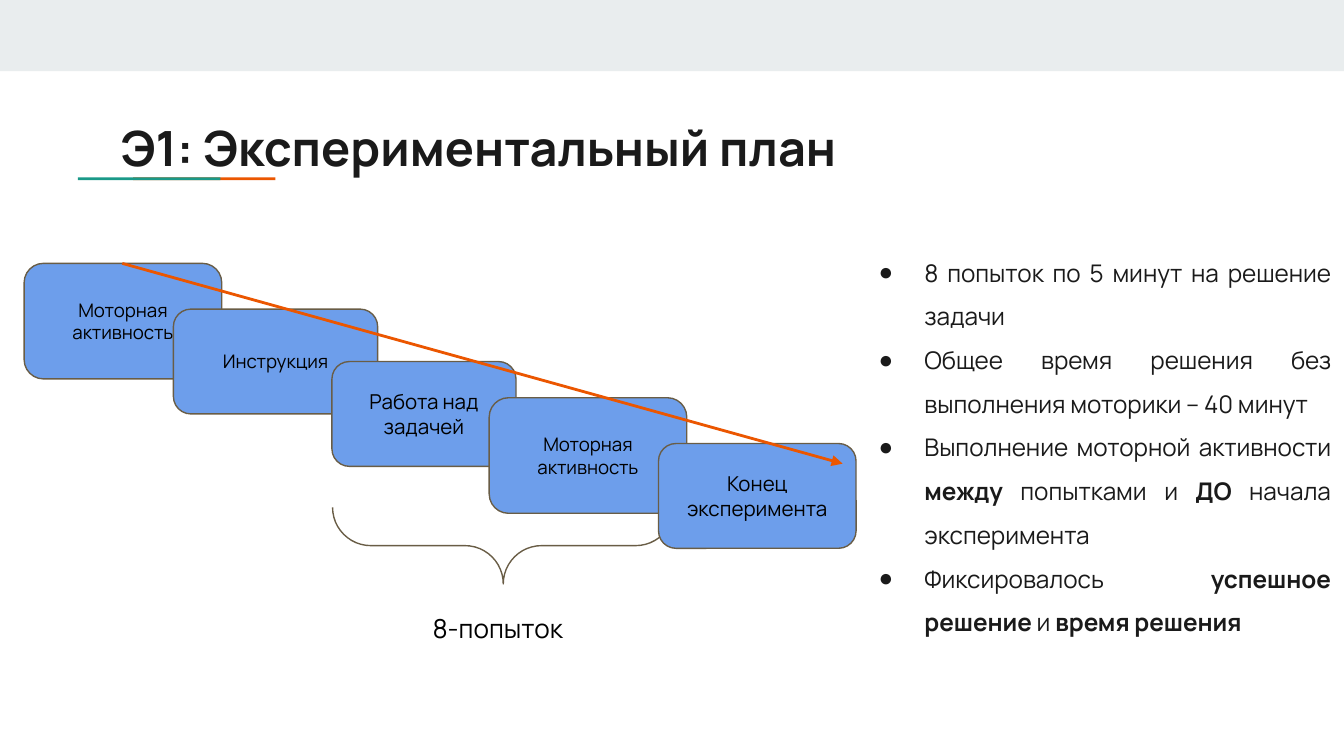
from lxml import etree
from pptx import Presentation
from pptx.dml.color import RGBColor
from pptx.enum.shapes import MSO_CONNECTOR, MSO_SHAPE
from pptx.enum.text import MSO_ANCHOR, PP_ALIGN
from pptx.oxml.ns import qn
from pptx.util import Inches, Pt

FONT = "Manrope"
BAND = RGBColor(0xE9, 0xED, 0xEE)
ORANGE = RGBColor(0xEB, 0x56, 0x00)
TEAL = RGBColor(0x1A, 0x99, 0x88)
BLUE = RGBColor(0x6D, 0x9E, 0xEB)
BROWN = RGBColor(0x69, 0x5D, 0x46)
INK = RGBColor(0x1A, 0x1A, 0x1A)
BLACK = RGBColor(0, 0, 0)

STAGES = [
    ("Моторная активность", 10, (0.18, 1.96, 1.47, 0.86)),
    ("Инструкция", 10, (1.29, 2.3, 1.52, 0.78)),
    ("Работа над задачей", 11, (2.47, 2.69, 1.37, 0.78)),
    ("Моторная активность", 10, (3.64, 2.96, 1.47, 0.86)),
    ("Конец эксперимента", 11, (4.9, 3.3, 1.47, 0.78)),
]

NOTES = [
    [("8 попыток по 5 минут на решение задачи", False)],
    [("Общее время решения без выполнения моторики – 40 минут", False)],
    [("Выполнение моторной активности ", False), ("между ", True),
     ("попытками и ", False), ("ДО ", True), ("начала эксперимента ", False)],
    [("Фиксировалось ", False), ("успешное решение", True),
     (" и ", False), ("время решения", True)],
]


def set_font(paragraph, size, color, bold=None):
    font = paragraph.font
    font.name, font.size, font.bold = FONT, Pt(size), bold
    font.color.rgb = color


def set_margins(frame, side=0.1, vertical=0.1):
    frame.word_wrap = True
    frame.margin_left = frame.margin_right = Inches(side)
    frame.margin_top = frame.margin_bottom = Inches(vertical)


def add_bar(slide, box, color):
    bar = slide.shapes.add_shape(MSO_SHAPE.RECTANGLE, *map(Inches, box))
    bar.shadow.inherit = False
    bar.fill.solid()
    bar.fill.fore_color.rgb = color
    bar.line.fill.background()


def add_label(slide, text, box, size, color, bold=None, vertical=0.1):
    frame = slide.shapes.add_textbox(*map(Inches, box)).text_frame
    set_margins(frame, vertical=vertical)
    frame.text = text
    set_font(frame.paragraphs[0], size, color, bold)


def add_stage(slide, text, size, box):
    stage = slide.shapes.add_shape(
        MSO_SHAPE.FLOWCHART_ALTERNATE_PROCESS, *map(Inches, box))
    stage.shadow.inherit = False
    stage.fill.solid()
    stage.fill.fore_color.rgb = BLUE
    stage.line.color.rgb = BROWN
    stage.line.width = Pt(0.75)
    frame = stage.text_frame
    set_margins(frame)
    frame.vertical_anchor = MSO_ANCHOR.MIDDLE
    frame.text = text
    frame.paragraphs[0].alignment = PP_ALIGN.CENTER
    set_font(frame.paragraphs[0], size, BLACK)


def add_brace(slide, box):
    brace = slide.shapes.add_shape(MSO_SHAPE.LEFT_BRACE, *map(Inches, box))
    brace.shadow.inherit = False
    brace.rotation = 270
    brace.adjustments[0] = brace.adjustments[1] = 0.5
    brace.fill.background()
    brace.line.color.rgb = BROWN
    brace.line.width = Pt(0.75)


def add_arrow(slide, start, end):
    arrow = slide.shapes.add_connector(
        MSO_CONNECTOR.STRAIGHT, *map(Inches, start + end))
    arrow.line.color.rgb = ORANGE
    arrow.line.width = Pt(1.5)
    outline = arrow._element.spPr.find(qn("a:ln"))
    etree.SubElement(outline, qn("a:tailEnd"), type="triangle")
    etree.SubElement(arrow._element.spPr, qn("a:effectLst"))


def add_bullet(paragraph):
    properties = paragraph._p.get_or_add_pPr()
    properties.set("marL", str(Inches(0.5)))
    properties.set("indent", str(Inches(-0.34)))
    bullet_color = etree.SubElement(properties, qn("a:buClr"))
    etree.SubElement(bullet_color, qn("a:srgbClr"), val=str(INK))
    etree.SubElement(properties, qn("a:buFont"), typeface="Arial")
    etree.SubElement(properties, qn("a:buChar"), char="●")


def add_notes(slide, notes, box):
    frame = slide.shapes.add_textbox(*map(Inches, box)).text_frame
    set_margins(frame)
    for index, parts in enumerate(notes):
        paragraph = frame.add_paragraph() if index else frame.paragraphs[0]
        paragraph.alignment = PP_ALIGN.JUSTIFY
        paragraph.line_spacing = 1.5
        add_bullet(paragraph)
        set_font(paragraph, 13, INK)
        for text, bold in parts:
            run = paragraph.add_run()
            run.text = text
            run.font.bold = bold


def main():
    deck = Presentation()
    deck.slide_width = Inches(10)
    deck.slide_height = Inches(10 * 9 / 16)
    slide = deck.slides.add_slide(deck.slide_layouts[6])

    add_bar(slide, (0, 0, 10, 0.53), BAND)
    add_bar(slide, (0.99, 1.32, 1.06, 0.02), ORANGE)
    add_bar(slide, (0.58, 1.32, 1.06, 0.02), TEAL)
    add_label(slide, "Э1: Экспериментальный план",
              (0.8, 0.78, 8.41, 0.59), 26, INK, bold=True)

    add_brace(slide, (3.46, 2.79, 0.57, 2.54))
    add_label(slide, "8-попыток", (3.12, 4.51, 1.24, 0.34), 14, BLACK, vertical=0.05)
    for text, size, box in STAGES:
        add_stage(slide, text, size, box)
    add_arrow(slide, (0.91, 1.96), (6.27, 3.45))

    add_notes(slide, NOTES, (6.28, 1.71, 3.72, 3.22))
    deck.save("out.pptx")


if __name__ == "__main__":
    main()
